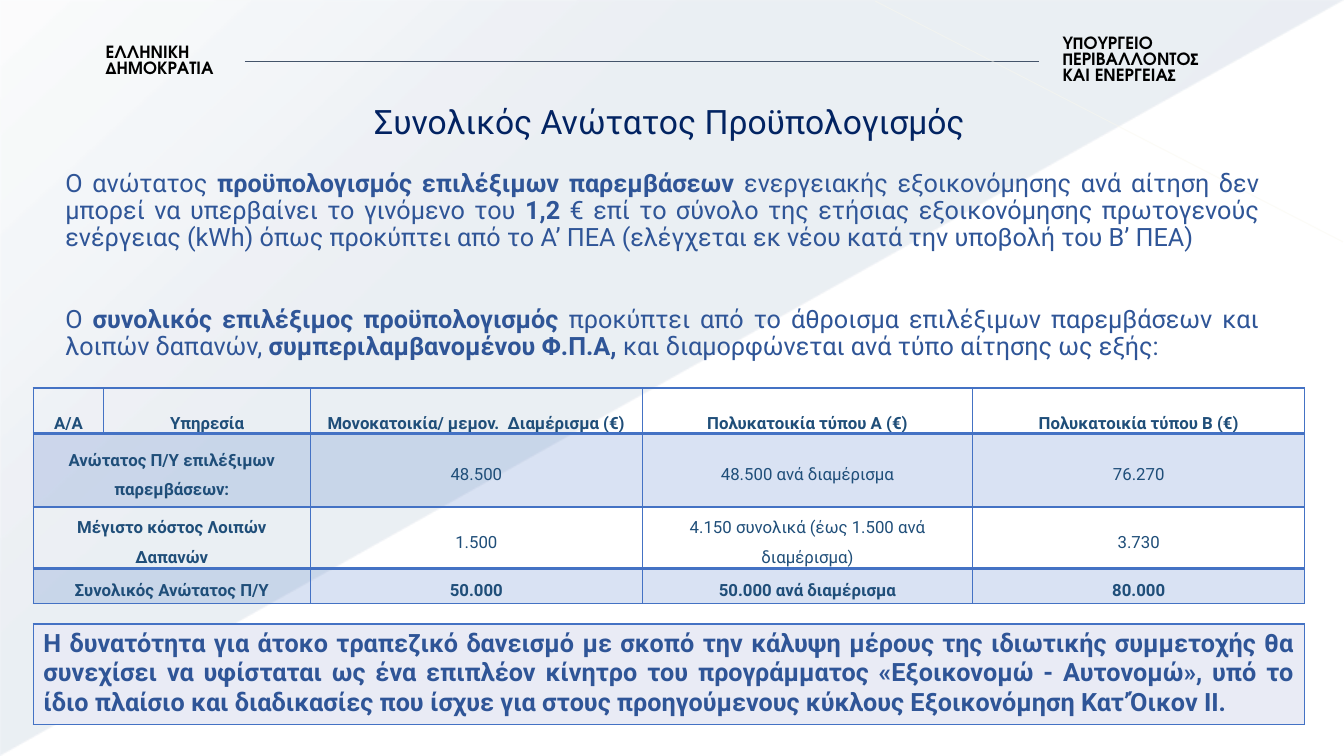
from lxml import etree
from pptx import Presentation
from pptx.dml.color import RGBColor
from pptx.enum.shapes import MSO_CONNECTOR as Connector, MSO_SHAPE as Shape
from pptx.enum.text import MSO_ANCHOR as Anchor, PP_ALIGN as Align
from pptx.oxml import parse_xml
from pptx.oxml.ns import nsdecls, qn
from pptx.util import Inches, Pt

BLUE, NAVY, TEXT_BLUE, CELL_BLUE = "4472C4", "002060", "2F5597", "1F4E79"
BODY_FONT, HEADER_FONT = "Roboto", "TeX Gyre Adventor"

BODY = [
    "Ο ανώτατος *προϋπολογισμός επιλέξιμων παρεμβάσεων *ενεργειακής εξοικονόμησης ανά αίτηση "
    "δεν μπορεί να υπερβαίνει το γινόμενο του *1,2 *€ επί το σύνολο της ετήσιας εξοικονόμησης "
    "πρωτογενούς ενέργειας (kWh) όπως προκύπτει από το Α’ ΠΕΑ (ελέγχεται εκ νέου κατά την "
    "υποβολή του Β’ ΠΕΑ)",
    "Ο *συνολικός επιλέξιμος προϋπολογισμός *προκύπτει από το άθροισμα επιλέξιμων παρεμβάσεων "
    "και λοιπών δαπανών, *συμπεριλαμβανομένου Φ.Π.Α, *και διαμορφώνεται ανά τύπο αίτησης ως εξής:",
]
BUDGET = [
    ["Α/Α", "Υπηρεσία", "Μονοκατοικία/ μεμον.  Διαμέρισμα (€)",
     "Πολυκατοικία τύπου Α (€)", "Πολυκατοικία τύπου Β (€)"],
    ["Ανώτατος Π/Υ επιλέξιμων παρεμβάσεων:", "", "48.500", "48.500 ανά διαμέρισμα", "76.270"],
    ["Μέγιστο κόστος Λοιπών Δαπανών", "", "1.500",
     "4.150 συνολικά (έως 1.500 ανά διαμέρισμα)", "3.730"],
    ["Συνολικός Ανώτατος Π/Υ", "", "50.000", "50.000 ανά διαμέρισμα", "80.000"],
]
LOAN_NOTE = (
    "Η δυνατότητα για άτοκο τραπεζικό δανεισμό με σκοπό την κάλυψη μέρους της ιδιωτικής "
    "συμμετοχής θα συνεχίσει να υφίσταται ως ένα επιπλέον κίνητρο του προγράμματος "
    "«Εξοικονομώ - Αυτονομώ», υπό το ίδιο πλαίσιο και διαδικασίες που ίσχυε για στους "
    "προηγούμενους κύκλους Εξοικονόμηση Κατ’Όικον ΙΙ."
)


def color(value):
    return RGBColor.from_string(value)


def set_alpha(element, percent):
    for item in element.iter(qn("a:srgbClr")):
        etree.SubElement(item, qn("a:alpha")).set("val", str(percent * 1000))


def format_para(para, size, value, font=BODY_FONT, bold=False, align=Align.LEFT, spacing=1.0):
    para.alignment = align
    para.line_spacing = spacing
    for span in para.runs:
        span.font.name, span.font.size, span.font.bold = font, Pt(size), bold
        span.font.color.rgb = color(value)


def add_line(slide, start, end, value, width, alpha=None):
    line = slide.shapes.add_connector(Connector.STRAIGHT, *map(Inches, start + end))
    line.line.color.rgb = color(value)
    line.line.width = Pt(width)
    if alpha:
        set_alpha(line.line._ln, alpha)
    etree.SubElement(line._element.spPr, qn("a:effectLst"))


def add_text_box(slide, box):
    frame = slide.shapes.add_textbox(*map(Inches, box)).text_frame
    frame.word_wrap = True
    return frame


def add_background(slide, box):
    # Pale triangle fading towards the top left corner
    triangle = slide.shapes.add_shape(Shape.RIGHT_TRIANGLE, *map(Inches, box))
    triangle.shadow.inherit = False
    triangle.line.fill.background()
    triangle.rotation = 180
    triangle._element.spPr.find(qn("a:xfrm")).set("flipH", "1")
    stops = "".join(
        f'<a:gs pos="{place * 1000}"><a:srgbClr val="1F497D">'
        f'<a:alpha val="{alpha * 1000}"/></a:srgbClr></a:gs>'
        for place, alpha in ((0, 10), (70, 8), (100, 1)))
    gradient = parse_xml(
        f'<a:gradFill {nsdecls("a")} rotWithShape="1"><a:gsLst>{stops}</a:gsLst>'
        f'<a:lin ang="{133 * 60000}" scaled="0"/></a:gradFill>')
    triangle._element.spPr.find(qn("a:prstGeom")).addnext(gradient)


def add_header(slide, box):
    left, top, width, height = box
    middle = top + height / 2
    add_line(slide, (left + 1.48, middle), (left + 9.36, middle), "44546A", 1)
    add_line(slide, (13.32, 2.4), (8.68, 0.01), "FAF8EE", 0.75, alpha=45)
    names = ((left + width - 1.85, 0.59, "ΥΠΟΥΡΓΕΙΟ ΠΕΡΙΒΑΛΛΟΝΤΟΣ ΚΑΙ ΕΝΕΡΓΕΙΑΣ"),
             (left, 0.42, "ΕΛΛΗΝΙΚΗ ΔΗΜΟΚΡΑΤΙΑ"))
    for name_left, name_height, name in names:
        frame = add_text_box(slide, (name_left, middle - name_height / 2, 1.85, name_height))
        frame.text = name
        format_para(frame.paragraphs[0], 12, "000000", HEADER_FONT, True, spacing=0.8)


def add_title(slide, box):
    title = slide.shapes.title
    title.left, title.top, title.width, title.height = map(Inches, box)
    title.text_frame.text = "Συνολικός Ανώτατος Προϋπολογισμός"
    title.text_frame.vertical_anchor = Anchor.MIDDLE
    format_para(title.text_frame.paragraphs[0], 24, NAVY, align=Align.CENTER, spacing=0.9)


def add_body(slide, box):
    frame = add_text_box(slide, box)
    frame.vertical_anchor = Anchor.MIDDLE
    for index, text in enumerate(BODY):
        para = frame.add_paragraph() if index else frame.paragraphs[0]
        parts = text.split("*")
        for part in parts:
            para.add_run().text = part
        format_para(para, 18, TEXT_BLUE, align=Align.JUSTIFY, spacing=0.9)
        for span in para.runs[1::2]:
            span.font.bold = True
        if index:
            para.space_before = Pt(39)


def set_borders(cell, top=1, bottom=1):
    properties = cell._tc.get_or_add_tcPr()
    for index, (side, width) in enumerate((("L", 1), ("R", 1), ("T", top), ("B", bottom))):
        properties.insert(index, parse_xml(
            f'<a:ln{side} {nsdecls("a")} w="{Pt(width)}"><a:solidFill>'
            f'<a:srgbClr val="{BLUE}"/></a:solidFill></a:ln{side}>'))


def add_plain_table(slide, box, widths, heights):
    frame = slide.shapes.add_table(len(heights), len(widths), *map(Inches, box))
    table = frame.table
    table.first_row = table.horz_banding = False
    for column, width in zip(table.columns, widths):
        column.width = Inches(width)
    for row, height in zip(table.rows, heights):
        row.height = Inches(height)
    return table


def add_budget_table(slide, box):
    table = add_plain_table(slide, box, (0.7, 2.05, 3.29, 3.28, 3.29), (0.45, 0.73, 0.61, 0.35))
    borders = ((1, 2), (1, 1), (1, 2.25), (2.25, 1))
    for row, texts in enumerate(BUDGET):
        if row:
            table.cell(row, 0).merge(table.cell(row, 1))
        for column, text in enumerate(texts):
            cell = table.cell(row, column)
            cell.margin_left = cell.margin_right = Inches(0.07)
            cell.margin_top = cell.margin_bottom = 0
            cell.vertical_anchor = Anchor.MIDDLE if row else Anchor.BOTTOM
            if row % 2:
                cell.fill.solid()
                cell.fill.fore_color.rgb = color(BLUE)
                set_alpha(cell._tc.tcPr, 20)
            else:
                cell.fill.background()
            set_borders(cell, *borders[row])
            if text:
                cell.text_frame.text = text
                para = cell.text_frame.paragraphs[0]
                bold = row in (0, 3) or column == 0
                format_para(para, 12, CELL_BLUE, bold=bold, align=Align.CENTER, spacing=1.5)
                para.space_after = Pt(4)


def add_loan_note(slide, box):
    cell = add_plain_table(slide, box, box[2:3], box[3:]).cell(0, 0)
    cell.fill.solid()
    cell.fill.fore_color.rgb = color("E9EBF5")
    set_borders(cell)
    cell.text_frame.text = LOAN_NOTE
    format_para(cell.text_frame.paragraphs[0], 18, TEXT_BLUE, bold=True, align=Align.JUSTIFY)


def main():
    deck = Presentation()
    deck.slide_width, deck.slide_height = Inches(13.33), Inches(7.5)
    slide = deck.slides.add_slide(deck.slide_layouts[5])
    add_background(slide, (0.01, 0.01, 13.31, 7.48))
    add_header(slide, (0.95, 0.32, 11.34, 0.58))
    add_title(slide, (0.89, 0.94, 11.5, 0.58))
    add_body(slide, (0.55, 1.63, 12.04, 2.01))
    add_budget_table(slide, (0.33, 3.85, 12.61, 2.14))
    add_loan_note(slide, (0.33, 6.19, 12.61, 1))
    deck.save("out.pptx")


if __name__ == "__main__":
    main()
